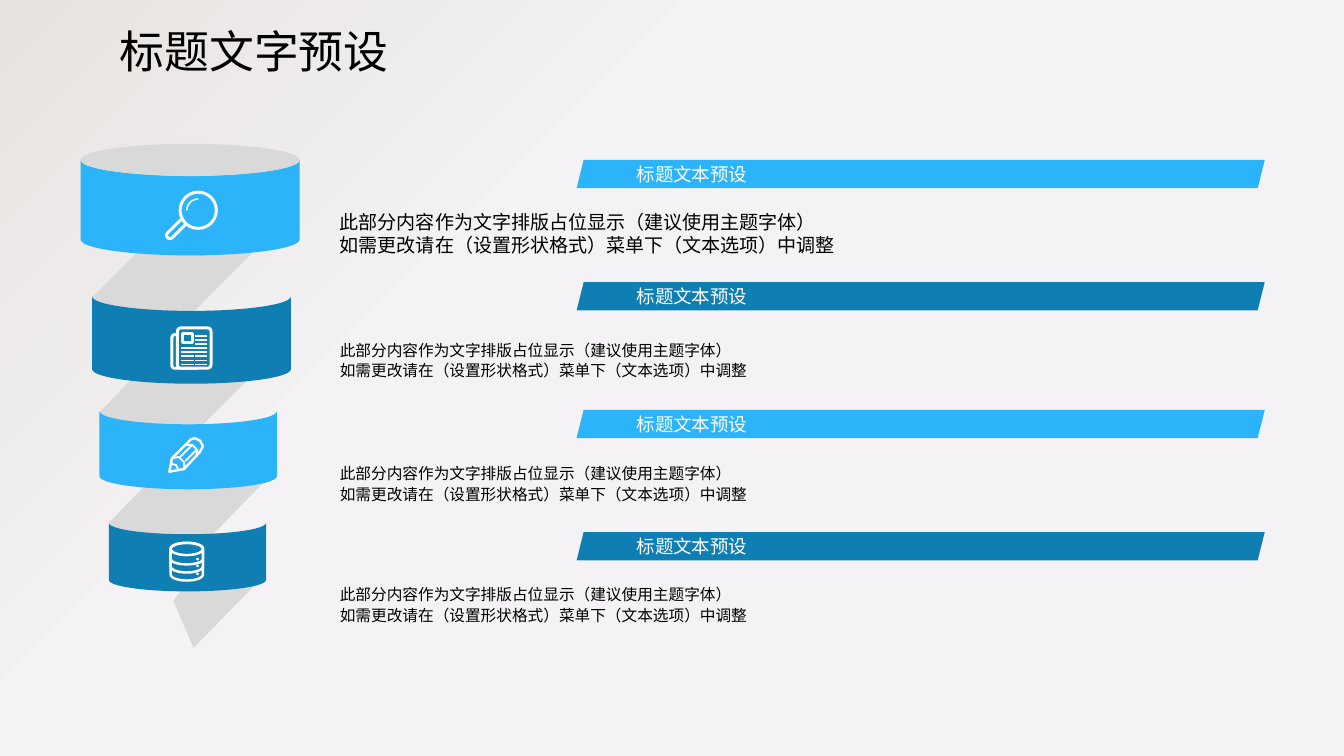
from lxml import etree
from pptx import Presentation
from pptx.dml.color import RGBColor
from pptx.enum import shapes, text
from pptx.oxml import ns
from pptx.util import Inches, Pt

COLORS = {"sky": "2BB4F9", "ocean": "0F7EB3", "gray": "D9D9D9", "white": "FFFFFF",
          "black": "000000", "haze": "F4F2F4", "sand": "E7E3E0"}
WIDTH = 10
HEIGHT = WIDTH * 9 / 16
CJK_FONT = "Noto Sans CJK SC"
SHAPE = shapes.MSO_SHAPE
HEADING = "标题文本预设"
DESCRIPTION = "此部分内容作为文字排版占位显示（建议使用主题字体）\n如需更改请在（设置形状格式）菜单下（文本选项）中调整"


def rgb(name):
    return RGBColor.from_string(COLORS[name])


def write(frame, words, size, color="black", font="Calibri", spacing=None,
          wrap=True, anchor=text.MSO_ANCHOR.TOP, inset=None):
    """Fill a text frame with one left-aligned paragraph."""
    frame.word_wrap = wrap
    frame.vertical_anchor = anchor
    if inset is not None:
        frame.margin_left = frame.margin_right = Inches(inset)
        frame.margin_top = frame.margin_bottom = Inches(inset)
    paragraph = frame.paragraphs[0]
    paragraph.text = words
    paragraph.alignment = text.PP_ALIGN.LEFT
    if spacing:
        paragraph.line_spacing = spacing
    for run in paragraph.runs:
        run.font.size = Pt(size)
        run.font.name = font
        run.font.color.rgb = rgb(color)
        east_asian = etree.SubElement(run._r.get_or_add_rPr(), ns.qn("a:ea"))
        east_asian.set("typeface", CJK_FONT)


class Deck:
    """Holds the presentation style and the current slide."""

    def __init__(self):
        self.prs = Presentation()
        self.prs.slide_width, self.prs.slide_height = Inches(WIDTH), Inches(HEIGHT)
        self.slide = self.prs.slides.add_slide(self.prs.slide_layouts[5])

    def paint(self, shape, fill, line, weight):
        shape.shadow.inherit = False
        if fill:
            shape.fill.solid()
            shape.fill.fore_color.rgb = rgb(fill)
        else:
            shape.fill.background()
        if line:
            shape.line.color.rgb = rgb(line)
            shape.line.width = Pt(weight)
        else:
            shape.line.fill.background()
        return shape

    def shape(self, kind, box, fill=None, line=None, weight=1.6, turn=0):
        shape = self.slide.shapes.add_shape(kind, *map(Inches, box))
        shape.rotation = turn
        return self.paint(shape, fill, line, weight)

    def outline(self, points, fill=None, line=None, weight=1.3, close=True):
        corners = [(Inches(x), Inches(y)) for x, y in points]
        builder = self.slide.shapes.build_freeform(*corners[0])
        builder.add_line_segments(corners[1:], close=close)
        return self.paint(builder.convert_to_shape(), fill, line, weight)

    def stroke(self, x1, y1, x2, y2, weight=0.7):
        line = self.slide.shapes.add_connector(
            shapes.MSO_CONNECTOR.STRAIGHT, *map(Inches, (x1, y1, x2, y2)))
        line.line.color.rgb = rgb("white")
        line.line.width = Pt(weight)
        etree.SubElement(line._element.spPr, ns.qn("a:effectLst"))

    def title(self, words, box):
        title = self.slide.shapes.title
        title.left, title.top, title.width, title.height = map(Inches, box)
        write(title.text_frame, words, 24, font=CJK_FONT, wrap=False,
              anchor=text.MSO_ANCHOR.MIDDLE)

    def textbox(self, words, box, size, **style):
        box = self.slide.shapes.add_textbox(*map(Inches, box))
        write(box.text_frame, words, size, **style)

    def backdrop(self):
        backdrop = self.shape(SHAPE.RECTANGLE, (0, 0, WIDTH, HEIGHT), "haze")
        backdrop.fill.gradient()
        backdrop.fill.gradient_angle = 315
        corner, rest = backdrop.fill.gradient_stops
        corner.color.rgb, corner.position = rgb("sand"), 0
        rest.color.rgb, rest.position = rgb("haze"), 0.36
        self.slide.shapes._spTree.insert(2, backdrop._element)


def magnifier(deck, band):
    deck.shape(SHAPE.ROUNDED_RECTANGLE, (1.22, 1.68, 0.18, 0.05), band, "white",
               turn=315).adjustments[0] = 0.5
    deck.shape(SHAPE.OVAL, (1.34, 1.43, 0.27, 0.27), band, "white")
    deck.shape(SHAPE.ARC, (1.39, 1.48, 0.17, 0.17), line="white", weight=0.8, turn=270)


def newspaper(deck, band):
    for sheet in ((1.28, 2.49, 0.2, 0.25), (1.32, 2.44, 0.25, 0.3)):
        deck.shape(SHAPE.ROUNDED_RECTANGLE, sheet, band, "white").adjustments[0] = 0.1
    deck.shape(SHAPE.RECTANGLE, (1.36, 2.48, 0.07, 0.07), line="white")
    for row in range(8):
        y = 2.5 + 0.03 * row
        if row in (3, 4):
            deck.stroke(1.35, y, 1.54, y)
        else:
            deck.stroke(1.45, y, 1.54, y)
        if row > 4:
            deck.stroke(1.35, y, 1.44, y)


def pencil(deck, band):
    deck.outline([(1.26, 3.51), (1.28, 3.41), (1.42, 3.27), (1.45, 3.26), (1.49, 3.28),
                  (1.51, 3.32), (1.49, 3.36), (1.37, 3.49)], band, "white")
    for seam in ([(1.28, 3.41), (1.33, 3.4), (1.37, 3.44), (1.37, 3.49)],
                 [(1.38, 3.31), (1.43, 3.31), (1.47, 3.35), (1.46, 3.39)],
                 [(1.27, 3.45), (1.31, 3.46), (1.33, 3.5)]):
        deck.outline(seam, line="white", weight=1, close=False)
    deck.stroke(1.34, 3.4, 1.43, 3.31, 1)
    deck.stroke(1.38, 3.43, 1.46, 3.35, 1)


def database(deck, band):
    for height in (0.28, 0.22, 0.16):
        can = deck.shape(SHAPE.CAN, (1.27, 4.04, 0.24, height), band, "white", 1.3)
        can.adjustments[0] = 0.09 / min(0.24, height)
    deck.shape(SHAPE.OVAL, (1.27, 4.04, 0.24, 0.09), band, "white", 1.3)
    for y in (4.15, 4.2, 4.26):
        deck.shape(SHAPE.OVAL, (1.46, y, 0.02, 0.02), "white")


# Each level: band box, icon, colour, bar top, description top, height, size, spacing
LEVELS = [
    ((1.06, 0.73, 0.71, 1.63), magnifier, "sky", 1.19, 1.52, 0.44, 10.2, None),
    ((1.1, 1.79, 0.65, 1.48), newspaper, "ocean", 2.1, 2.47, 0.42, 8.4, 1.1),
    ((1.11, 2.69, 0.58, 1.32), pencil, "sky", 3.05, 3.39, 0.42, 8.4, 1.1),
    ((1.14, 3.56, 0.51, 1.17), database, "ocean", 3.96, 4.29, 0.42, 8.4, 1.1),
]
RIBBONS = [
    [(1.63, 4.03), (1.93, 4.32), (1.44, 4.82), (1.29, 4.47)],
    [(1.87, 3.22), (2.01, 3.36), (2.02, 3.53), (1.25, 4.32), (0.81, 3.89),
     (1.29, 3.4), (1.55, 3.3)],
    [(1.79, 2.39), (2.12, 2.55), (1.17, 3.5), (0.74, 3.07), (1.22, 2.57), (1.5, 2.48)],
]


def main():
    deck = Deck()
    deck.backdrop()
    deck.title("标题文字预设", (0.79, 0.13, 2.34, 0.5))

    # Folded ribbon behind the bands
    for ribbon in RIBBONS:
        deck.outline(ribbon, "gray")
    deck.shape(SHAPE.RECTANGLE, (1.07, 1.28, 0.61, 1.35), "gray", turn=45)

    # Bands with icons, then the lid of the top band
    for band, icon, color, *_ in LEVELS:
        deck.shape(SHAPE.FLOWCHART_STORED_DATA, band, color, turn=270)
        icon(deck, color)
    deck.shape(SHAPE.OVAL, (0.6, 1.07, 1.63, 0.24), "gray")

    # Heading bars and descriptions
    for _, _, color, bar_top, top, height, size, spacing in LEVELS:
        bar = deck.shape(SHAPE.PARALLELOGRAM, (4.29, bar_top, 5.12, 0.21), color)
        write(bar.text_frame, HEADING, 9.9, color="white", wrap=False,
              anchor=text.MSO_ANCHOR.MIDDLE, inset=0)
        deck.textbox(DESCRIPTION, (2.43, top, 4.38, height), size, spacing=spacing)

    deck.prs.save("out.pptx")


if __name__ == "__main__":
    main()
